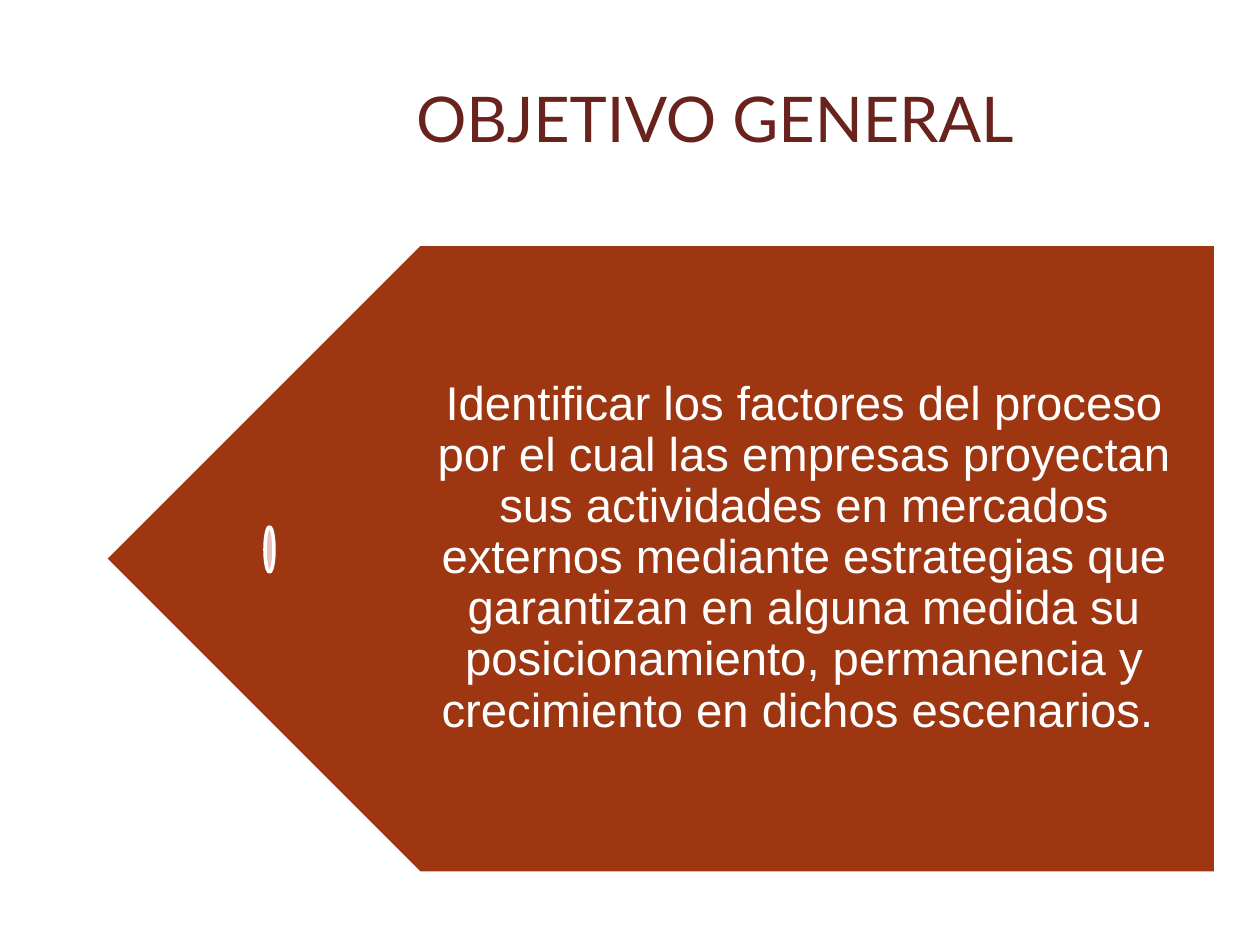
from pptx import Presentation
from pptx.dml.color import RGBColor
from pptx.enum.shapes import MSO_SHAPE
from pptx.enum.text import MSO_ANCHOR, PP_ALIGN
from pptx.util import Emu, Pt

PENTAGON = MSO_SHAPE.PENTAGON
OVAL = MSO_SHAPE.OVAL
MIDDLE = MSO_ANCHOR.MIDDLE
CENTER = PP_ALIGN.CENTER

PX_PER_INCH = 126
COLORS = {
    "title": "6A221D",
    "arrow": "9E3611",
    "dot": "EAC1BD",
    "white": "FFFFFF",
}


def px(length):
    return Emu(round(length * 914400 / PX_PER_INCH))


def color(name):
    return RGBColor.from_string(COLORS[name])


class SlideBuilder:
    """Holds the outline style and the slide being filled."""

    outline_color = "white"
    outline_width = Pt(2)

    def __init__(self, slide):
        self.slide = slide

    def shape(self, preset, box, fill, rotation=0):
        shape = self.slide.shapes.add_shape(preset, *map(px, box))
        shape.shadow.inherit = False
        shape.rotation = rotation
        shape.fill.solid()
        shape.fill.fore_color.rgb = color(fill)
        shape.line.color.rgb = color(self.outline_color)
        shape.line.width = self.outline_width
        return shape

    def text(self, box, content, font, size, ink, insets=(13, 6, 13, 6), spacing=1.0):
        frame = self.slide.shapes.add_textbox(*map(px, box)).text_frame
        frame.word_wrap = True
        frame.vertical_anchor = MIDDLE
        (frame.margin_left, frame.margin_top,
         frame.margin_right, frame.margin_bottom) = map(px, insets)
        paragraph = frame.paragraphs[0]
        paragraph.alignment = CENTER
        paragraph.line_spacing = spacing
        run = paragraph.add_run()
        run.text = content
        run.font.name = font
        run.font.size = Pt(size)
        run.font.color.rgb = color(ink)


def main():
    deck = Presentation()
    deck.slide_width, deck.slide_height = px(1260), px(945)
    builder = SlideBuilder(deck.slides.add_slide(deck.slide_layouts[6]))

    # Title
    builder.text((233, 38, 964, 158), "OBJETIVO GENERAL", "Lato", 36, "title")

    # Arrow pointing left, with the objective on it
    top, height = 244, 629
    builder.shape(PENTAGON, (105, top, 1111, height), "arrow", rotation=180)
    objective = (
        "Identificar los factores del proceso por el cual las empresas "
        "proyectan sus actividades en mercados externos mediante estrategias "
        "que garantizan en alguna medida su posicionamiento, permanencia y "
        "crecimiento en dichos escenarios. "
    )
    builder.text((261, top, 954, height), objective, "Arial", 27, "white",
                 insets=(158, 14, 26, 14), spacing=0.9)

    # Small dot near the tip
    builder.shape(OVAL, (265, 527, 9, 45), "dot")

    deck.save("out.pptx")


if __name__ == "__main__":
    main()
